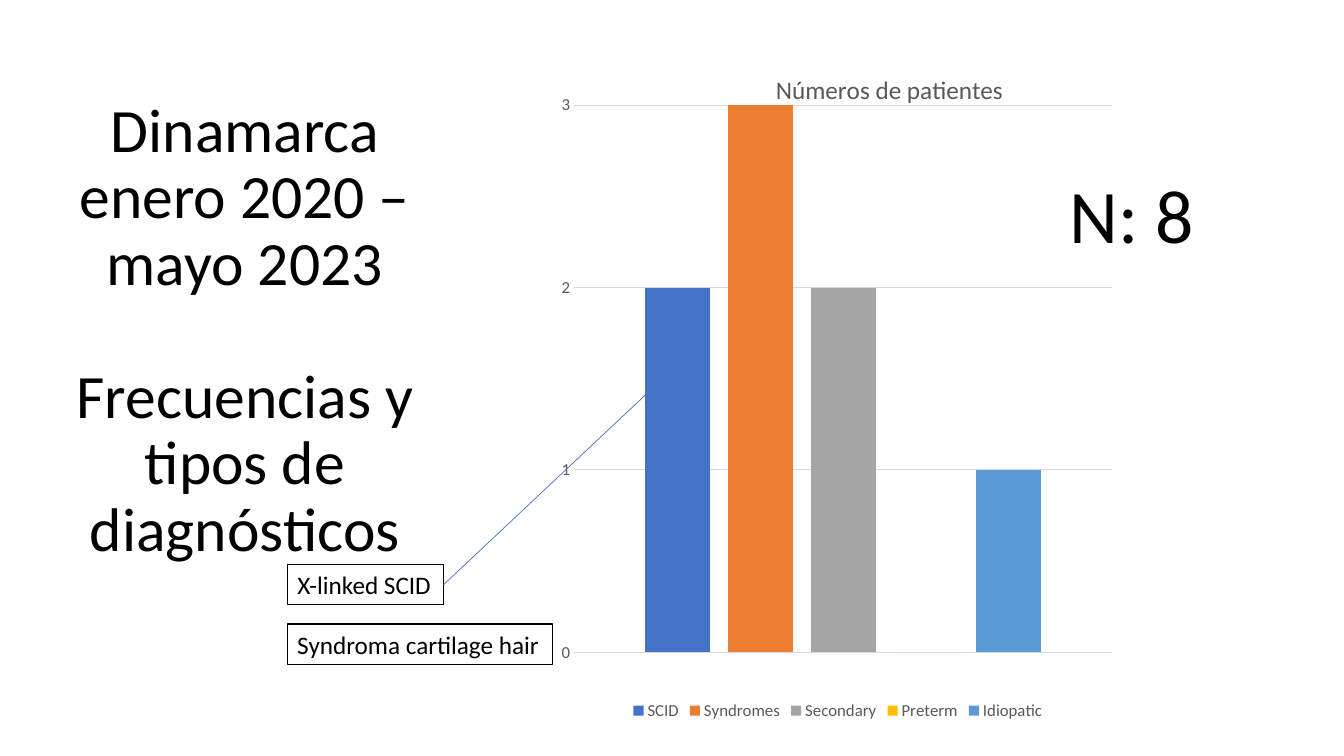
from lxml import etree
from pptx import Presentation
from pptx.chart.data import CategoryChartData
from pptx.dml.color import RGBColor
from pptx.enum.chart import XL_CHART_TYPE, XL_LEGEND_POSITION, XL_TICK_MARK
from pptx.enum.shapes import MSO_CONNECTOR, MSO_SHAPE
from pptx.enum.text import MSO_ANCHOR, MSO_AUTO_SIZE, PP_ALIGN
from pptx.oxml import parse_xml
from pptx.oxml.ns import nsdecls, qn
from pptx.util import Inches, Pt

FONT = "Calibri"
BLACK = RGBColor(0x00, 0x00, 0x00)
WHITE = RGBColor(0xFF, 0xFF, 0xFF)
GRAY = RGBColor(0x59, 0x59, 0x59)
GRID = RGBColor(0xD9, 0xD9, 0xD9)
BLUE = RGBColor(0x44, 0x72, 0xC4)
ORANGE = RGBColor(0xED, 0x7D, 0x31)
SILVER = RGBColor(0xA5, 0xA5, 0xA5)
GOLD = RGBColor(0xFF, 0xC0, 0x00)
SKY = RGBColor(0x5B, 0x9B, 0xD5)

DIAGNOSES = [
    ("SCID", 2, BLUE),
    ("Syndromes", 3, ORANGE),
    ("Secondary", 2, SILVER),
    ("Preterm", 0, GOLD),
    ("Idiopatic", 1, SKY),
]


def set_font(font, size, color):
    font.name = FONT
    font.size = Pt(size)
    font.bold = False
    font.color.rgb = color


def add_title(s, paragraphs):
    title = s.shapes.title
    title.left, title.top = Inches(0.37), Inches(0)
    title.width, title.height = Inches(4.12), Inches(6.58)
    tf = title.text_frame
    tf.text = "\n".join(paragraphs)
    tf.word_wrap = True
    tf.auto_size = MSO_AUTO_SIZE.NONE
    tf.vertical_anchor = MSO_ANCHOR.MIDDLE
    for p in tf.paragraphs:
        p.alignment = PP_ALIGN.CENTER
        p.line_spacing = 0.9
        p.space_before = Pt(0)
        for r in p.runs:
            set_font(r.font, 44, BLACK)
    tf.paragraphs[-1].space_before = Pt(47.5)


def set_layout(element, **values):
    """Give a chart title or plot area a manual layout in chart fractions."""
    for old in element.findall(qn("c:layout")):
        element.remove(old)
    layout = parse_xml(f"<c:layout {nsdecls('c')}><c:manualLayout/></c:layout>")
    for tag, value in values.items():
        etree.SubElement(layout[0], qn(f"c:{tag}")).set("val", str(value))
    tx = element.find(qn("c:tx"))
    element.insert(0 if tx is None else 1, layout)


def add_patient_chart(s):
    data = CategoryChartData()
    data.categories = ["1"]
    for name, count, _ in DIAGNOSES:
        data.add_series(name, [count])
    chart = s.shapes.add_chart(
        XL_CHART_TYPE.COLUMN_CLUSTERED,
        Inches(5.31), Inches(0.61), Inches(6), Inches(6.58), data).chart
    set_font(chart.font, 10, BLACK)

    tf = chart.chart_title.text_frame
    tf.text = "Números de patientes"
    set_font(tf.paragraphs[0].runs[0].font, 18, GRAY)
    chart.chart_title.include_in_layout = True
    title = chart.chart_title._element
    set_layout(title, xMode="edge", yMode="edge", x=0.39, y=0.01)
    set_layout(chart._chartSpace.chart.plotArea, layoutTarget="inner",
               xMode="edge", yMode="edge", x=0.064, y=0.066, w=0.89, h=0.825)

    chart.has_legend = True
    chart.legend.position = XL_LEGEND_POSITION.BOTTOM
    chart.legend.include_in_layout = False
    set_font(chart.legend.font, 12, GRAY)

    chart.category_axis.visible = False
    axis = chart.value_axis
    axis.minimum_scale, axis.maximum_scale, axis.major_unit = 0, 3, 1
    axis.major_tick_mark = axis.minor_tick_mark = XL_TICK_MARK.NONE
    axis.format.line.fill.background()
    axis.major_gridlines.format.line.color.rgb = GRID
    axis.major_gridlines.format.line.width = Pt(0.75)
    set_font(axis.tick_labels.font, 12, GRAY)

    plot = chart.plots[0]
    plot.vary_by_categories = False
    plot.gap_width, plot.overlap = 219, -27
    for series, (_, _, color) in zip(plot.series, DIAGNOSES):
        series.format.fill.solid()
        series.format.fill.fore_color.rgb = color


def write_line(shape, text, size):
    tf = shape.text_frame
    tf.text = text
    tf.word_wrap = False
    tf.auto_size = MSO_AUTO_SIZE.SHAPE_TO_FIT_TEXT
    tf.vertical_anchor = MSO_ANCHOR.TOP
    p = tf.paragraphs[0]
    p.alignment = PP_ALIGN.LEFT
    set_font(p.runs[0].font, size, BLACK)


def add_label(s, text, top, width):
    label = s.shapes.add_shape(MSO_SHAPE.RECTANGLE, Inches(2.85), Inches(top),
                               Inches(width), Inches(0.4))
    label.shadow.inherit = False
    label.fill.solid()
    label.fill.fore_color.rgb = WHITE
    label.line.color.rgb = BLACK
    label.line.width = Pt(1)
    write_line(label, text, 18)
    return label


def add_leader(s, label, x, y):
    """Run a thin line from the label's right side to a point."""
    leader = s.shapes.add_connector(MSO_CONNECTOR.STRAIGHT, Inches(4.4),
                                    Inches(5.8), Inches(x), Inches(y))
    leader.begin_connect(label, 3)
    leader.line.color.rgb = BLUE
    leader.line.width = Pt(0.5)
    etree.SubElement(leader._element.spPr, qn("a:effectLst"))


def main():
    prs = Presentation()
    prs.slide_width, prs.slide_height = Inches(13.33), Inches(7.5)
    s = prs.slides.add_slide(prs.slide_layouts[5])
    add_title(s, ["Dinamarca\venero 2020 – mayo 2023",
                  "Frecuencias y tipos de diagnósticos"])
    add_patient_chart(s)
    scid = add_label(s, "X-linked SCID", 5.6, 1.55)
    add_leader(s, scid, 6.58, 3.75)
    add_label(s, "Syndroma cartilage hair", 6.19, 2.63)
    total = s.shapes.add_textbox(Inches(10.51), Inches(1.62),
                                 Inches(1.45), Inches(1.01))
    write_line(total, "N: 8", 54)
    prs.save("out.pptx")


if __name__ == "__main__":
    main()
